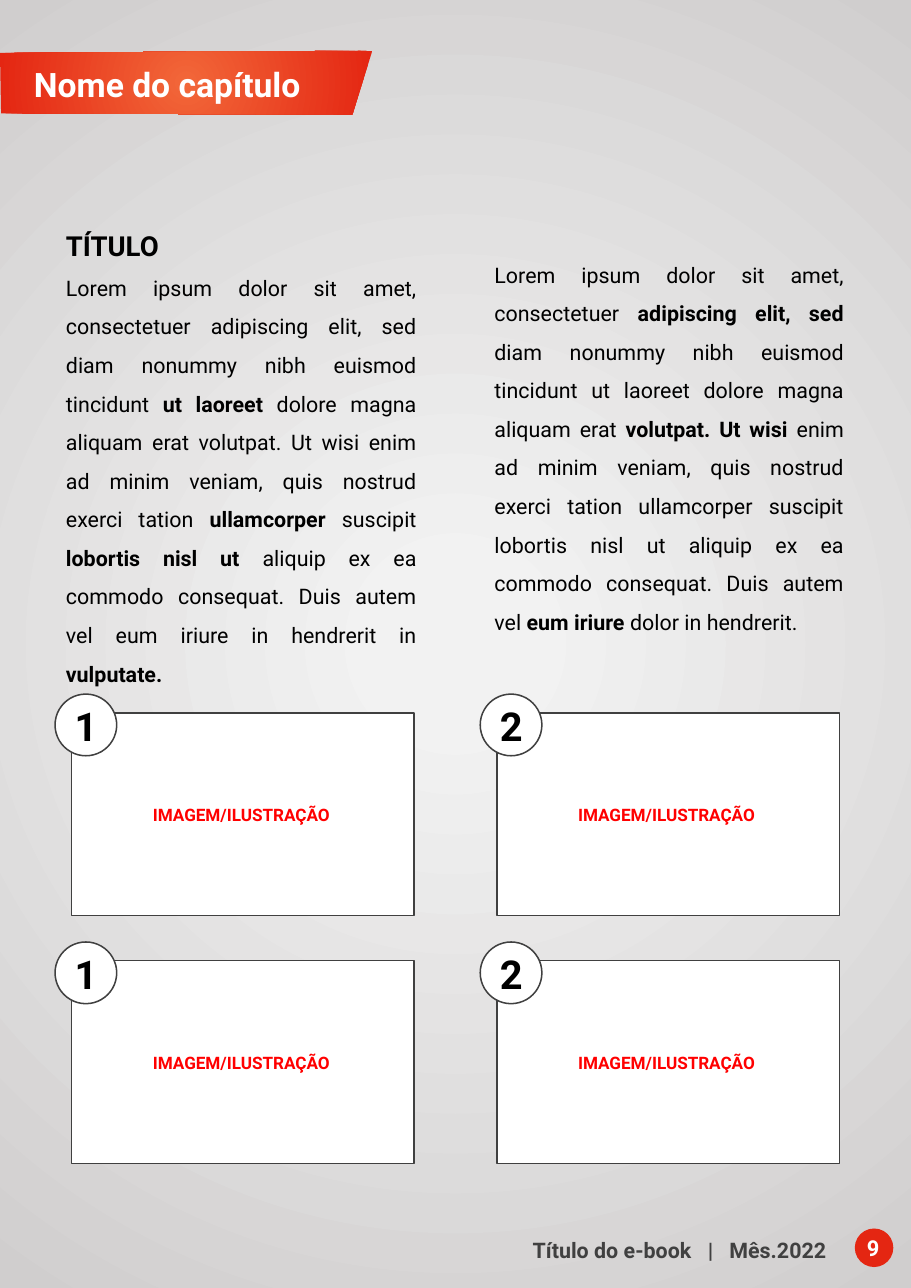
from dataclasses import dataclass
from itertools import product

from lxml import etree
from pptx import Presentation
from pptx import util as u
from pptx.dml.color import RGBColor
from pptx.enum import shapes, text
from pptx.oxml import ns

PX = 9144
WIDE, HIGH = 827, 1169


@dataclass(frozen=True)
class Theme:
    font: str = "Roboto"
    white: str = "FFFFFF"
    black: str = "000000"
    gray: str = "404040"
    pale: str = "F2F2F2"
    silver: str = "D0CECE"
    orange: str = "F26739"
    red: str = "E42612"
    alert: str = "FF0000"
    chapter: float = 22
    title: float = 18
    body: float = 14
    page: float = 14.3
    label: float = 11.2
    number: float = 26


def px(*sizes):
    return [u.Emu(size * PX) for size in sizes]


def apply(item, values):
    for name, value in values.items():
        setattr(item, name, value)


class Page:
    def __init__(self, deck, theme):
        self.theme = theme
        self.slide = deck.slides.add_slide(deck.slide_layouts[6])

    def paint(self, shape, fill, line=None):
        shape.shadow.inherit = False
        if isinstance(fill, str):
            shape.fill.solid()
            shape.fill.fore_color.rgb = RGBColor.from_string(fill)
        else:
            self.glow(shape, fill)
        if line:
            shape.line.color.rgb = RGBColor.from_string(line)
            shape.line.width = u.Pt(1)
        else:
            shape.line.fill.background()

    def glow(self, shape, stops):
        shape.fill.gradient()
        for stop, (place, color) in zip(shape.fill.gradient_stops, stops):
            stop.position = place
            stop.color.rgb = RGBColor.from_string(color)
        grad = shape._element.spPr.find(ns.qn("a:gradFill"))
        grad.remove(grad.find(ns.qn("a:lin")))
        path = etree.SubElement(grad, ns.qn("a:path"), path="circle")
        sides = dict.fromkeys("ltrb", "50000")
        etree.SubElement(path, ns.qn("a:fillToRect"), **sides)

    def shape(self, kind, box, fill, line=None):
        shape = self.slide.shapes.add_shape(kind, *px(*box))
        self.paint(shape, fill, line)

    def outline(self, points, fill):
        start, *rest = points
        form = self.slide.shapes.build_freeform(*start, scale=PX)
        form.add_line_segments(rest, close=True)
        self.paint(form.convert_to_shape(), fill)

    def text(self, box, lines, color, **format):
        frame = self.slide.shapes.add_textbox(*px(*box)).text_frame
        apply(frame, {"word_wrap": True,
                      "auto_size": text.MSO_AUTO_SIZE.SHAPE_TO_FIT_TEXT})
        for index, (size, words) in enumerate(lines):
            para = frame.add_paragraph() if index else frame.paragraphs[0]
            apply(para, format)
            for turn, part in enumerate(words.split("*")):
                if part:
                    self.run(para, part, size, color, turn % 2 == 1)
        return frame

    def run(self, para, words, size, color, bold):
        run = para.add_run()
        run.text = words
        apply(run.font, {"name": self.theme.font, "size": u.Pt(size), "bold": bold})
        run.font.color.rgb = RGBColor.from_string(color)

    def spread(self, run, points):
        run._r.get_or_add_rPr().set("spc", str(points * 100))

    def panel(self, left, top, number):
        t = self.theme
        self.shape(shapes.MSO_SHAPE.RECTANGLE, (left, top, 311, 184), t.white, t.gray)
        self.text((left + 64, top + 78, 210, 29),
                  [(t.label, "*IMAGEM/ILUSTRAÇÃO*")], t.alert)
        self.shape(shapes.MSO_SHAPE.OVAL, (left - 15, top - 17, 56, 56), t.white, t.gray)
        self.text((left - 7, top - 15, 35, 54), [(t.number, f"*{number}*")], t.black)


LEFT = (
    "Lorem ipsum dolor sit amet, consectetuer adipiscing elit, sed diam nonummy "
    "nibh euismod tincidunt *ut laoreet *dolore magna aliquam erat volutpat. Ut "
    "wisi enim ad minim veniam, quis nostrud exerci tation *ullamcorper *suscipit "
    "*lobortis nisl ut *aliquip ex ea commodo consequat. Duis autem vel eum iriure "
    "in hendrerit in *vulputate.*"
)
RIGHT = (
    "Lorem ipsum dolor sit amet, consectetuer *adipiscing elit, sed *diam nonummy "
    "nibh euismod tincidunt ut laoreet dolore magna aliquam erat *volutpat. Ut wisi "
    "*enim ad minim veniam, quis nostrud exerci tation ullamcorper suscipit lobortis "
    "nisl ut aliquip ex ea commodo consequat. Duis autem vel *eum iriure *dolor in "
    "hendrerit."
)


def main():
    deck = Presentation()
    apply(deck, dict(zip(("slide_width", "slide_height"), px(WIDE, HIGH))))
    t = Theme()
    page = Page(deck, t)

    page.shape(shapes.MSO_SHAPE.RECTANGLE, (0, 0, WIDE, HIGH),
               [(0.09, t.pale), (1, t.silver)])
    page.outline([(0, 48), (338, 46), (320, 104), (1, 103)],
                 [(0, t.orange), (1, t.red)])
    page.text((21, 53, 268, 47), [(t.chapter, "*Nome do capítulo*")], t.white)

    footer = page.text((363, 1118, 397, 34),
                       [(t.body, "*Título do e-book** |** Mês.2022*")],
                       t.gray, alignment=text.PP_ALIGN.RIGHT)
    page.spread(footer.paragraphs[0].runs[1], 7)
    page.shape(shapes.MSO_SHAPE.OVAL, (776, 1115, 35, 35), t.red)
    page.text((777, 1116, 35, 34), [(t.page, "*9*")], t.white)

    prose = {"alignment": text.PP_ALIGN.JUSTIFY, "line_spacing": 1.5}
    page.text((50, 188, 338, 405), [(t.title, "*TÍTULO*"), (t.body, LEFT)],
              t.black, **prose)
    page.text((439, 221, 337, 371), [(t.body, RIGHT)], t.black, **prose)

    for row, col in product(range(2), repeat=2):
        page.panel(65 + 386 * col, 647 + 225 * row, col + 1)

    deck.save("out.pptx")


if __name__ == "__main__":
    main()
